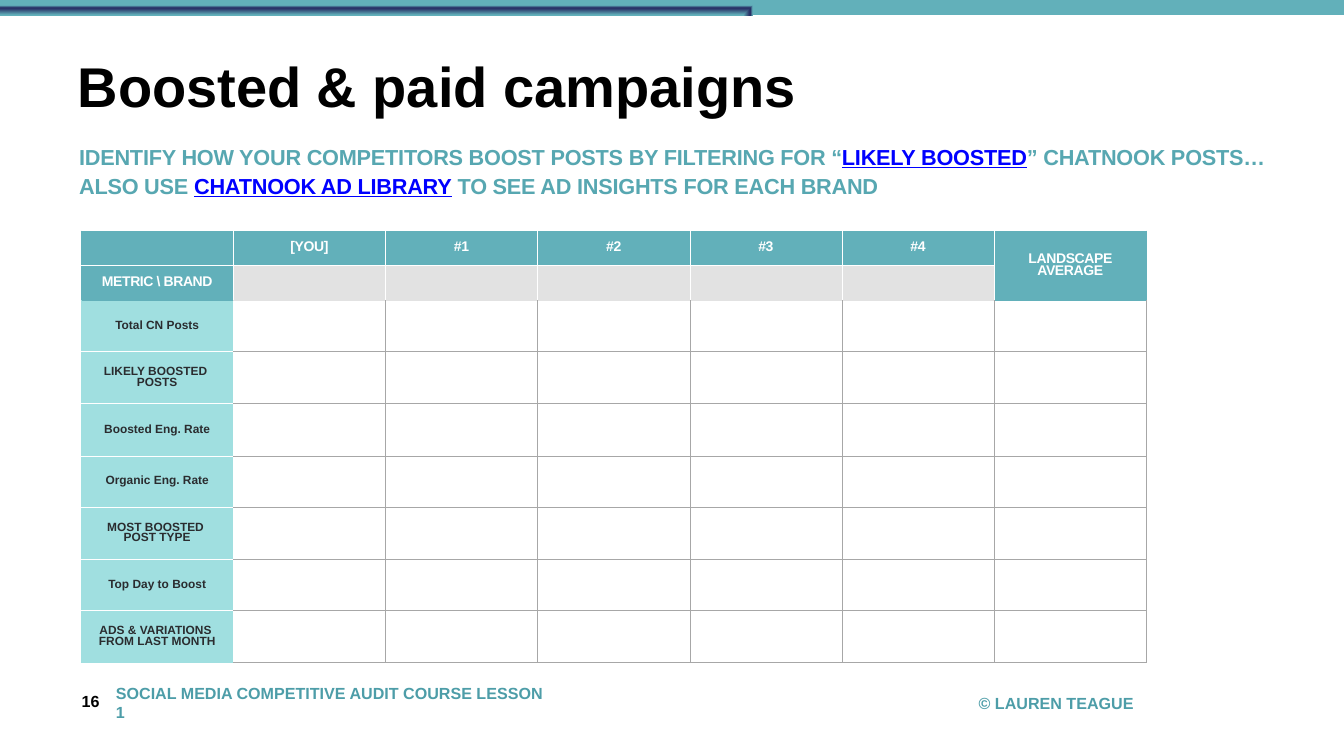
import pptx
import pptx.dml.color
import pptx.enum.shapes
import pptx.enum.text
import pptx.oxml
import pptx.oxml.ns
import pptx.util

Inches = pptx.util.Inches
Pt = pptx.util.Pt
ANCHOR = pptx.enum.text.MSO_ANCHOR
ALIGN = pptx.enum.text.PP_ALIGN

FONT = "Arial"
TEAL, MINT, WHITE, GREY = "62B0BA", "A0DFE0", "FFFFFF", "A7A7A7"
BRAND_FILL, LABEL_TEXT, FOOTER_TEXT = "E2E2E2", "2A2C2F", "4D9DA8"
LEAD_TEXT, LINK_TEXT = "57A7B1", "0000FF"

BRANDS = ["[YOU]", "#1", "#2", "#3", "#4"]
METRICS = ["Total CN Posts", "LIKELY BOOSTED \vPOSTS", "Boosted Eng. Rate",
           "Organic Eng. Rate", "MOST BOOSTED \vPOST TYPE", "Top Day to Boost",
           "ADS & VARIATIONS \vFROM LAST MONTH"]
ROW_HEIGHTS = [0.69, 0.69, 1.01, 1.04, 1.04, 1.01, 1.04, 1.01, 1.04]
COLUMN_WIDTH = 3.02

LEAD_LINES = [
    [("IDENTIFY HOW YOUR COMPETITORS BOOST POSTS BY FILTERING FOR “", False),
     ("LIKELY BOOSTED", True), ("” CHATNOOK POSTS…", False)],
    [("ALSO USE ", False), ("CHATNOOK AD LIBRARY", True),
     (" TO SEE AD INSIGHTS FOR EACH BRAND", False)],
]


def rgb(color):
    return pptx.dml.color.RGBColor.from_string(color)


def set_all(target, values):
    for name, value in values.items():
        setattr(target, name, value)


def style_run(run, size, color, spacing=0, underline=None):
    """Spacing is in points."""
    set_all(run.font, {"name": FONT, "size": Pt(size), "bold": True,
                       "underline": underline})
    run.font.color.rgb = rgb(color)
    if spacing:
        run.font._element.set("spc", str(round(spacing * 100)))


def set_margins(target, inset):
    set_all(target, {f"margin_{side}": Inches(inset)
                     for side in ("left", "right", "top", "bottom")})


def add_text_frame(slide, box, anchor):
    frame = slide.shapes.add_textbox(*map(Inches, box)).text_frame
    set_margins(frame, 0.08)
    set_all(frame, {"word_wrap": True, "vertical_anchor": anchor})
    return frame


def add_band(slide, box, stops, focus):
    """Draw a strip whose gradient closes in on the focus (l, t, r, b in percent)."""
    band = slide.shapes.add_shape(
        pptx.enum.shapes.MSO_SHAPE.RECTANGLE, *map(Inches, box))
    band.shadow.inherit = False
    band.line.fill.background()
    stop_xml = "".join(f'<a:gs pos="{pos * 1000}"><a:srgbClr val="{color}"/></a:gs>'
                       for pos, color in stops)
    edges = " ".join(f'{side}="{value * 1000}"' for side, value in zip("ltrb", focus))
    gradient = pptx.oxml.parse_xml(
        f'<a:gradFill {pptx.oxml.ns.nsdecls("a")}><a:gsLst>{stop_xml}</a:gsLst>'
        f'<a:path path="shape"><a:fillToRect {edges}/></a:path></a:gradFill>')
    band._element.spPr.find(pptx.oxml.ns.qn("a:prstGeom")).addnext(gradient)


def add_title(slide, box, text):
    title = slide.shapes.title
    set_all(title, dict(zip(("left", "top", "width", "height"), map(Inches, box))))
    frame = title.text_frame
    frame.text = text
    set_margins(frame, 0.05)
    set_all(frame, {"word_wrap": True, "vertical_anchor": ANCHOR.TOP,
                    "auto_size": pptx.enum.text.MSO_AUTO_SIZE.NONE})
    set_all(frame.paragraphs[0], {"line_spacing": 0.8, "alignment": ALIGN.LEFT})
    style_run(frame.paragraphs[0].runs[0], 80, "000000")


def add_lead(slide, box, lines):
    paragraph = add_text_frame(slide, box, ANCHOR.TOP).paragraphs[0]
    paragraph.line_spacing = 1.1
    for number, line in enumerate(lines):
        if number:
            paragraph.add_line_break()
        for text, is_link in line:
            run = paragraph.add_run()
            run.text = text
            style_run(run, 31, LINK_TEXT if is_link else LEAD_TEXT, -0.3,
                      is_link or None)


def add_footer(slide, box, text, color=FOOTER_TEXT, anchor=ANCHOR.MIDDLE):
    frame = add_text_frame(slide, box, anchor)
    frame.text = text
    style_run(frame.paragraphs[0].runs[0], 23, color)


def format_cell(cell, fill, edges):
    """Edges gives the colours of the left, right, top and bottom border."""
    properties = cell._tc.get_or_add_tcPr()
    for side, color in zip("LRTB", edges):
        properties.append(pptx.oxml.parse_xml(
            f'<a:ln{side} {pptx.oxml.ns.nsdecls("a")} w="12700"><a:solidFill>'
            f'<a:srgbClr val="{color}"/></a:solidFill></a:ln{side}>'))
    if fill:
        cell.fill.solid()
        cell.fill.fore_color.rgb = rgb(fill)
    else:
        cell.fill.background()


def write_cell(cell, text, size, color, spacing=0, inset=0.06):
    cell.text = text
    set_margins(cell, inset)
    cell.vertical_anchor = ANCHOR.MIDDLE
    paragraph = cell.text_frame.paragraphs[0]
    set_all(paragraph, {"alignment": ALIGN.CENTER, "line_spacing": 0.8})
    for run in paragraph.runs:
        style_run(run, size, color, spacing)


def add_campaign_table(slide, left, top):
    row_count, column_count = len(ROW_HEIGHTS), len(BRANDS) + 2
    last_row, last_column = row_count - 1, column_count - 1
    table = slide.shapes.add_table(
        row_count, column_count, Inches(left), Inches(top),
        Inches(COLUMN_WIDTH * column_count), Inches(sum(ROW_HEIGHTS))).table
    set_all(table, {"first_row": False, "horz_banding": False})
    for column in table.columns:
        column.width = Inches(COLUMN_WIDTH)
    for row, height in zip(table.rows, ROW_HEIGHTS):
        row.height = Inches(height)

    for r in range(row_count):
        for c in range(column_count):
            if r < 2:
                fill = BRAND_FILL if r == 1 and 0 < c < last_column else TEAL
                bottom = TEAL if c == last_column else WHITE
                if r == 1:
                    bottom = fill
                edges = (WHITE if c else TEAL, TEAL if c == last_column else WHITE,
                         WHITE if r and c < last_column else TEAL, bottom)
            elif c == 0:
                fill = MINT
                edges = (MINT, WHITE, TEAL if r == 2 else WHITE,
                         MINT if r == last_row else WHITE)
            else:
                fill = None
                above = BRAND_FILL if c < last_column else TEAL
                edges = (WHITE if c == 1 else GREY, GREY,
                         above if r == 2 else GREY, GREY)
            format_cell(table.cell(r, c), fill, edges)

    table.cell(0, last_column).merge(table.cell(1, last_column))
    for c, brand in enumerate(BRANDS, 1):
        write_cell(table.cell(0, c), brand, 20, WHITE, -0.6)
    write_cell(table.cell(1, 0), "METRIC \\ BRAND", 20, WHITE, -0.6)
    write_cell(table.cell(0, last_column), "LANDSCAPE AVERAGE", 20, WHITE, -0.6, 0)
    for r, metric in enumerate(METRICS, 2):
        write_cell(table.cell(r, 0), metric, 17, LABEL_TEXT)


def main():
    deck = pptx.Presentation()
    set_all(deck, {"slide_width": Inches(26.67), "slide_height": Inches(15)})
    slide = deck.slides.add_slide(deck.slide_layouts.get_by_name("Title Only"))
    add_band(slide, (-0.02, -0.04, 26.7, 0.3),
             [(0, TEAL), (69, "252A62"), (96, "8B4AB4")], (5, 133, 95, -33))
    add_band(slide, (-0.09, -0.08, 26.84, 0.38),
             [(0, TEAL), (62, "2B386B"), (74, "252A62"), (100, TEAL)], (6, 99, 94, 1))
    add_title(slide, (1.49, 1.22, 24.24, 1.66), "Boosted & paid campaigns")
    add_lead(slide, (1.49, 2.72, 24.24, 1.66), LEAD_LINES)
    add_campaign_table(slide, 1.61, 4.58)
    add_footer(slide, (1.54, 13.64, 0.57, 0.52), "16", "000000", ANCHOR.TOP)
    add_footer(slide, (2.22, 13.68, 8.8, 0.52),
               "SOCIAL MEDIA COMPETITIVE AUDIT COURSE LESSON 1")
    add_footer(slide, (19.34, 13.68, 3.33, 0.52), "© LAUREN TEAGUE")
    deck.save("out.pptx")


if __name__ == "__main__":
    main()
